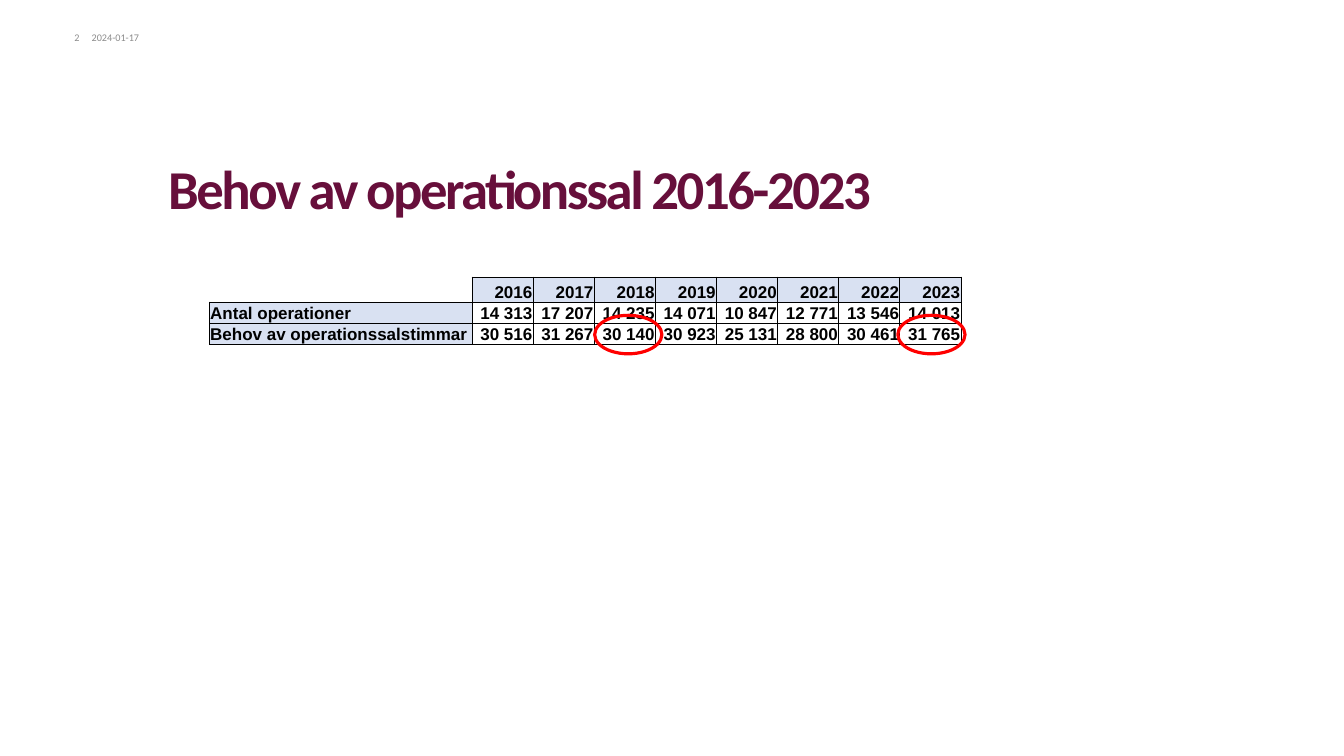
from lxml.etree import SubElement
from pptx import Presentation
from pptx.dml.color import RGBColor
from pptx.enum.shapes import MSO_SHAPE as Shape
from pptx.enum.text import MSO_ANCHOR as Anchor, PP_ALIGN as Align
from pptx.oxml.ns import qn
from pptx.util import Pt

PX = 9144  # EMU per px, 100 px to the inch

PLUM = RGBColor(0x67, 0x0F, 0x3B)
GREY = RGBColor(0x8C, 0x8C, 0x8C)
BLACK = RGBColor(0, 0, 0)
PALE = RGBColor(0xD9, 0xE1, 0xF2)
RED = RGBColor(0xFF, 0, 0)

ROWS = [
    ["", "2016", "2017", "2018", "2019", "2020", "2021", "2022", "2023"],
    ["Antal operationer", "14 313", "17 207", "14 235", "14 071",
     "10 847", "12 771", "13 546", "14 013"],
    ["Behov av operationssalstimmar", "30 516", "31 267", "30 140", "30 923",
     "25 131", "28 800", "30 461", "31 765"],
]
HEIGHTS = [41, 32, 32]
LABEL, YEAR = 429, 100  # column widths


def px(*vals):
    return [val * PX for val in vals]


def style(para, face, size, color, bold=False, align=Align.LEFT):
    para.alignment = align
    font = para.font
    font.name, font.size, font.bold = face, Pt(size), bold
    font.color.rgb = color


def add_text(slide, box, text, size, color, bold=False, align=Align.LEFT):
    frame = slide.shapes.add_textbox(*px(*box)).text_frame
    frame.word_wrap = True
    frame.margin_left = frame.margin_right = 0
    frame.margin_top = frame.margin_bottom = 0
    para = frame.paragraphs[0]
    para.text = text
    style(para, "Calibri", size, color, bold, align)
    return frame


def add_title(slide):
    frame = add_text(slide, (275, 146, 1207, 223),
                     "Behov av operationssal 2016-2023", 64.5, PLUM, True)
    frame.vertical_anchor = Anchor.BOTTOM
    frame.margin_bottom = 8 * PX
    para = frame.paragraphs[0]
    para.line_spacing = 0.85
    para.runs[0].font._element.set("spc", "-280")


def add_edges(cell, sides):
    props = cell._tc.get_or_add_tcPr()
    for side in sides:
        line = SubElement(props, qn(f"a:ln{side}"), w=str(Pt(0.5)))
        fill = SubElement(line, qn("a:solidFill"))
        SubElement(fill, qn("a:srgbClr"), val=str(BLACK))


def fill_cell(cell, text, row, col):
    corner = row == col == 0
    add_edges(cell, "RB" if corner else "LRTB")
    if not corner and (row == 0 or col == 0):
        cell.fill.solid()
        cell.fill.fore_color.rgb = PALE
    else:
        cell.fill.background()
    cell.margin_left = cell.margin_right = cell.margin_top = PX
    cell.margin_bottom = 0
    cell.vertical_anchor = Anchor.BOTTOM
    para = cell.text_frame.paragraphs[0]
    para.text = text
    style(para, "Arial", 20, BLACK, True, Align.RIGHT if col else Align.LEFT)


def add_grid(slide):
    count = len(ROWS[0])
    box = px(343, 453, LABEL + YEAR * (count - 1), sum(HEIGHTS))
    table = slide.shapes.add_table(len(ROWS), count, *box).table
    table.first_row = table.horz_banding = False
    for col, column in enumerate(table.columns):
        column.width = PX * (YEAR if col else LABEL)
    for row, high in enumerate(HEIGHTS):
        table.rows[row].height = high * PX
        for col, text in enumerate(ROWS[row]):
            fill_cell(table.cell(row, col), text, row, col)


def add_ring(slide, left):
    ring = slide.shapes.add_shape(Shape.OVAL, *px(left, 516, 110, 63))
    ring.shadow.inherit = False
    ring.fill.background()
    ring.line.color.rgb = RED
    ring.line.width = Pt(3.75)


def main():
    deck = Presentation()
    deck.slide_width, deck.slide_height = px(2199, 1237)
    slide = deck.slides.add_slide(deck.slide_layouts[6])

    # Heading, date and page number
    add_title(slide)
    add_text(slide, (150, 52, 87, 20), "2024-01-17", 12, GREY)
    add_text(slide, (91, 52, 39, 20), "2", 12, GREY, align=Align.RIGHT)

    # Table with the 2018 and 2023 needs ringed
    add_grid(slide)
    for left in (973, 1469):
        add_ring(slide, left)

    deck.save("out.pptx")


if __name__ == "__main__":
    main()
